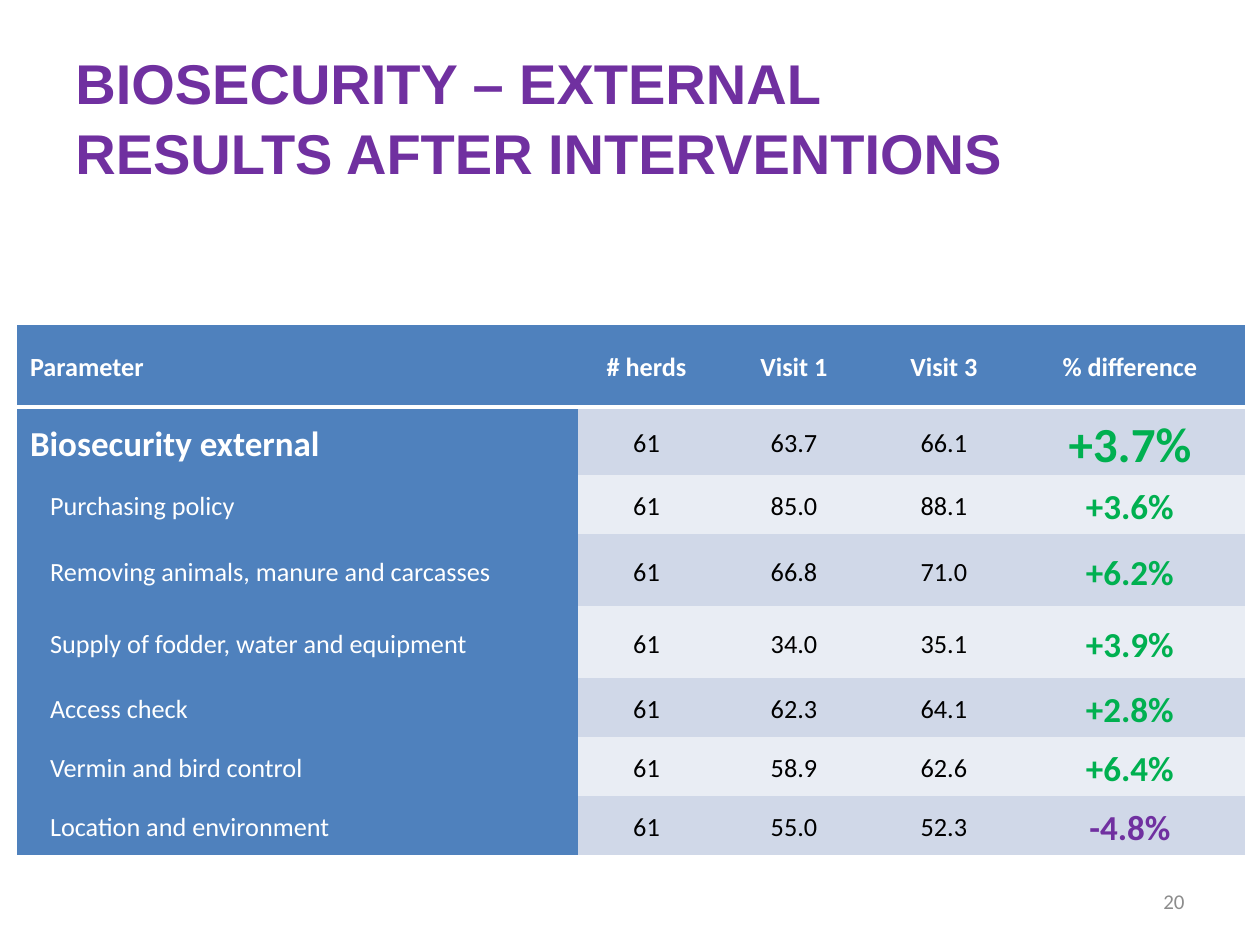
from lxml import etree
from pptx import Presentation
from pptx.dml.color import RGBColor
from pptx.enum.text import MSO_ANCHOR, PP_ALIGN
from pptx.oxml.ns import qn
from pptx.util import Emu, Pt

MIDDLE = MSO_ANCHOR.MIDDLE
LEFT, CENTER, RIGHT = PP_ALIGN.LEFT, PP_ALIGN.CENTER, PP_ALIGN.RIGHT

WHITE = RGBColor(0xFF, 0xFF, 0xFF)
BLACK = RGBColor(0, 0, 0)
GRAY = RGBColor(0x8C, 0x8C, 0x8C)
BLUE = RGBColor(0x4F, 0x81, 0xBD)
BANDS = RGBColor(0xD0, 0xD8, 0xE8), RGBColor(0xE9, 0xED, 0xF4)
GREEN = RGBColor(0, 0xB0, 0x50)
PURPLE = RGBColor(0x70, 0x30, 0xA0)

TITLE = ["BIOSECURITY – EXTERNAL ", "RESULTS AFTER INTERVENTIONS"]
HEAD = ["Parameter", "# herds", "Visit 1", "Visit 3", "% difference"]
ROWS = [
    ["Biosecurity external", "61", "63.7", "66.1", "+3.7%"],
    ["Purchasing policy", "61", "85.0", "88.1", "+3.6%"],
    ["Removing animals, manure and carcasses", "61", "66.8", "71.0", "+6.2%"],
    ["Supply of fodder, water and equipment", "61", "34.0", "35.1", "+3.9%"],
    ["Access check", "61", "62.3", "64.1", "+2.8%"],
    ["Vermin and bird control", "61", "58.9", "62.6", "+6.4%"],
    ["Location and environment", "61", "55.0", "52.3", "-4.8%"],
]
WIDTHS = [562, 137, 158, 142, 230]
HEIGHTS = [83, 68, 59, 72, 72, 59, 59, 59]


def px(n):
    return Emu(round(n * 914400 / 126))


def add_run(para, text, size, color, bold=False, face="Calibri"):
    run = para.add_run()
    run.text = text
    font = run.font
    font.name, font.size, font.bold = face, Pt(size), bold
    font.color.rgb = color


def add_box(slide, box, align):
    """Add an empty text box and return its first paragraph."""
    frame = slide.shapes.add_textbox(*map(px, box)).text_frame
    frame.word_wrap = True
    frame.vertical_anchor = MIDDLE
    para = frame.paragraphs[0]
    para.alignment = align
    return para


def add_title(slide, box):
    para = add_box(slide, box, LEFT)
    para.line_spacing = 1.04
    for i, line in enumerate(TITLE):
        if i:
            para.add_line_break()
        add_run(para, line, 32, PURPLE, True, "Arial")


def add_number(slide, box):
    add_run(add_box(slide, box, RIGHT), "20", 12, GRAY)


def set_edges(cell, shown):
    """Draw a white line on the sides in shown (side: points), none elsewhere."""
    props = cell._tc.get_or_add_tcPr()
    for side in "LRTB":
        width = Pt(shown.get(side, 0))
        line = etree.SubElement(props, qn(f"a:ln{side}"), w=str(width))
        if width:
            fill = etree.SubElement(line, qn("a:solidFill"))
            etree.SubElement(fill, qn("a:srgbClr"), val=str(WHITE))
        else:
            etree.SubElement(line, qn("a:noFill"))


def cell_look(row, col, text):
    """Return the size, colour and weight of a cell's text."""
    if row == 0:
        return 15, WHITE, True
    if col == 0:
        return (20, WHITE, True) if row == 1 else (15, WHITE, False)
    if col == len(HEAD) - 1:
        color = GREEN if text.startswith("+") else PURPLE
        return 28 if row == 1 else 20, color, True
    return 15, BLACK, False


def fill_cell(cell, row, col, text):
    edges = {"L": 1} if col == 0 else {}
    if row == 0:
        edges.update(T=1, B=3)
    elif row == 1:
        edges["T"] = 3
    set_edges(cell, edges)
    cell.fill.solid()
    cell.fill.fore_color.rgb = BLUE if row == 0 or col == 0 else BANDS[(row - 1) % 2]
    cell.vertical_anchor = MIDDLE
    cell.margin_left = cell.margin_right = px(4)
    cell.margin_top = cell.margin_bottom = 0

    para = cell.text_frame.paragraphs[0]
    para.line_spacing, para.space_before = 1.15, Pt(10)
    para.alignment = CENTER if col else LEFT
    if col == 0:
        para._p.get_or_add_pPr().set("marL", str(px(30 if row > 1 else 10)))
    add_run(para, text, *cell_look(row, col, text))


def add_results(slide, left, top):
    rows = [HEAD] + ROWS
    size = left, top, sum(WIDTHS), sum(HEIGHTS)
    table = slide.shapes.add_table(len(rows), len(HEAD), *map(px, size)).table
    for col, width in zip(table.columns, WIDTHS):
        col.width = px(width)
    for row, height in zip(table.rows, HEIGHTS):
        row.height = px(height)
    for r, texts in enumerate(rows):
        for c, text in enumerate(texts):
            fill_cell(table.cell(r, c), r, c, text)


def main():
    deck = Presentation()
    deck.slide_width, deck.slide_height = px(1260), px(945)
    slide = deck.slides.add_slide(deck.slide_layouts[6])
    add_title(slide, (63, 38, 1134, 156))
    add_number(slide, (903, 876, 294, 50))
    add_results(slide, 16, 324)
    deck.save("out.pptx")


if __name__ == "__main__":
    main()
